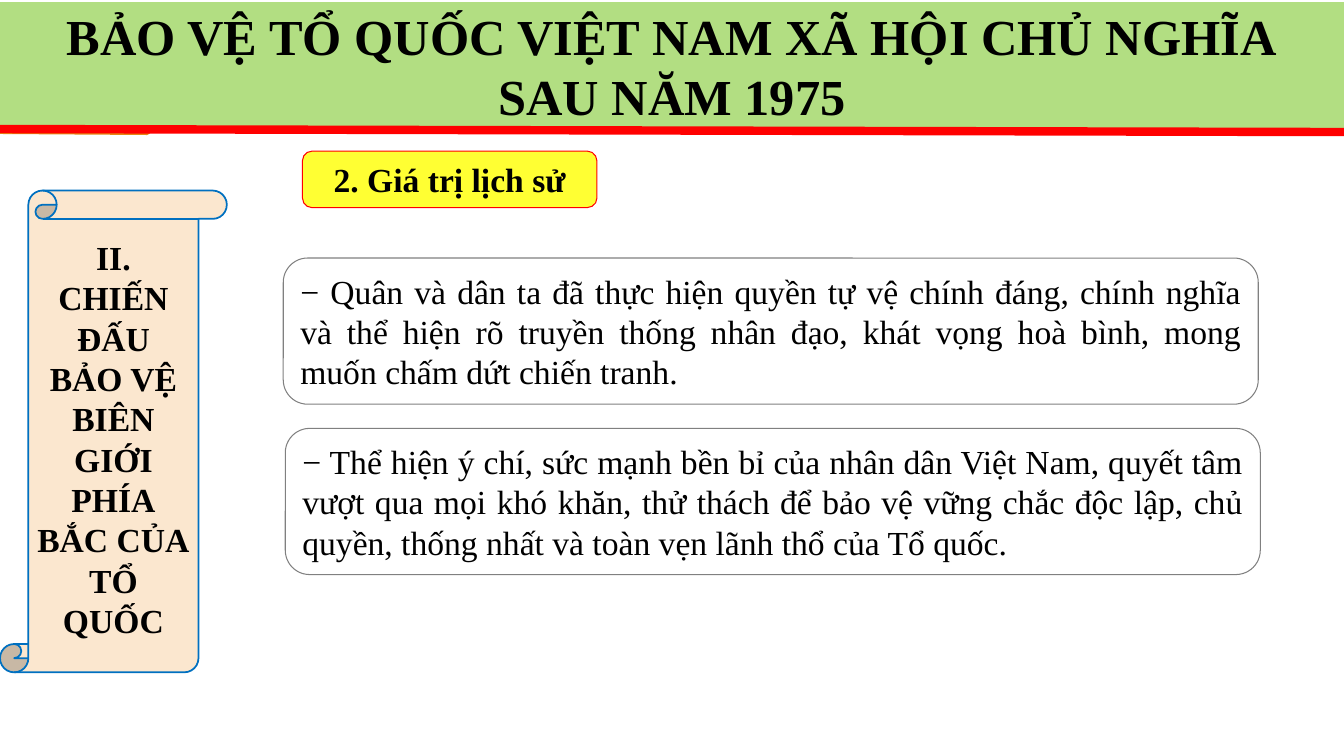
import pptx
import pptx.util
import pptx.dml.color
import pptx.enum.shapes
import pptx.enum.text
import pptx.oxml.ns
import lxml.etree
from dataclasses import dataclass

Inches = pptx.util.Inches
Shape = pptx.enum.shapes.MSO_SHAPE
Align = pptx.enum.text.PP_ALIGN
Fit = pptx.enum.text.MSO_AUTO_SIZE

# Content
TITLE = ("BẢO VỆ TỔ QUỐC VIỆT NAM XÃ HỘI CHỦ NGHĨA", "SAU NĂM 1975")
HEADING = "2. Giá trị lịch sử"
SCROLL_LINES = ("II.", "CHIẾN", "ĐẤU", "BẢO VỆ", "BIÊN", "GIỚI", "PHÍA",
                "BẮC CỦA", "TỔ", "QUỐC")
VALUES = (
    "− Quân và dân ta đã thực hiện quyền tự vệ chính đáng, chính nghĩa và thể "
    "hiện rõ truyền thống nhân đạo, khát vọng hoà bình, mong muốn chấm dứt chiến tranh.",
    "− Thể hiện ý chí, sức mạnh bền bỉ của nhân dân Việt Nam, quyết tâm vượt qua "
    "mọi khó khăn, thử thách để bảo vệ vững chắc độc lập, chủ quyền, thống nhất và "
    "toàn vẹn lãnh thổ của Tổ quốc.",
)


@dataclass(frozen=True)
class Theme:
    font: str = "Times New Roman"
    title_size: int = 36
    text_size: int = 24
    text: str = "000000"
    banner: str = "B2DE82"
    tab: str = "E78712"
    red: str = "FF0000"
    yellow: str = "FFFF33"
    scroll: str = "FBE7CF"
    blue: str = "0070C0"
    grey: str = "808080"


THEME = Theme()


def rgb(value):
    return pptx.dml.color.RGBColor.from_string(value)


def paint(sp, fill=None, line=None, width=0.75):
    if fill:
        sp.fill.solid()
        sp.fill.fore_color.rgb = rgb(fill)
    else:
        sp.fill.background()
    if line:
        sp.line.color.rgb = rgb(line)
        sp.line.width = pptx.util.Pt(width)
    else:
        sp.line.fill.background()


def write(sp, paragraphs, size=THEME.text_size, bold=True, align=Align.CENTER,
          fit=Fit.NONE):
    """Each paragraph is a tuple of lines."""
    tf = sp.text_frame
    tf.word_wrap = True
    tf.auto_size = fit
    tf.vertical_anchor = pptx.enum.text.MSO_ANCHOR.MIDDLE
    for i, lines in enumerate(paragraphs):
        p = tf.add_paragraph() if i else tf.paragraphs[0]
        p.alignment = align
        for j, line in enumerate(lines):
            if j:
                p.add_line_break()
            r = p.add_run()
            r.text = line
            r.font.name = THEME.font
            r.font.size = pptx.util.Pt(size)
            r.font.bold = bold
            r.font.color.rgb = rgb(THEME.text)


def add_box(slide, kind, box, fill=None, line=None, width=0.75):
    sp = slide.shapes.add_shape(kind, *map(Inches, box))
    sp.shadow.inherit = False
    paint(sp, fill, line, width)
    return sp


def main():
    prs = pptx.Presentation()
    prs.slide_width, prs.slide_height = Inches(13.33), Inches(7.5)
    slide = prs.slides.add_slide(prs.slide_layouts[5])

    # Arrow tab, sent behind the banner
    fb = slide.shapes.build_freeform(0, Inches(0.78), scale=1.0)
    tab_points = ((1.46, 0.78), (1.48, 0.79), (1.73, 1.04), (1.74, 1.06),
                  (1.73, 1.08), (1.48, 1.33), (1.46, 1.34), (0, 1.33))
    fb.add_line_segments([(Inches(x), Inches(y)) for x, y in tab_points], close=True)
    tab = fb.convert_to_shape()
    tab.shadow.inherit = False
    paint(tab, THEME.tab)

    # Title banner
    title = slide.shapes.title
    title.left, title.top, title.width, title.height = map(
        Inches, (0, 0.02, 13.33, 1.26))
    paint(title, THEME.banner)
    write(title, [(line,) for line in TITLE], THEME.title_size)
    tab._element.addnext(title._element)

    # Red rule under the banner
    rule = slide.shapes.add_connector(
        pptx.enum.shapes.MSO_CONNECTOR.STRAIGHT,
        *map(Inches, (0, 1.28, 13.33, 1.31)))
    rule.line.color.rgb = rgb(THEME.red)
    rule.line.width = pptx.util.Pt(6)
    lxml.etree.SubElement(rule._element.spPr, pptx.oxml.ns.qn("a:effectLst"))

    # Section heading
    heading = add_box(slide, Shape.ROUNDED_RECTANGLE, (3, 1.5, 2.92, 0.56),
                      THEME.yellow, THEME.red)
    write(heading, [(HEADING,)], fit=Fit.SHAPE_TO_FIT_TEXT)

    # Chapter scroll
    scroll = add_box(slide, Shape.VERTICAL_SCROLL, (0, 1.89, 2.25, 4.78),
                     THEME.scroll, THEME.blue, 1.25)
    write(scroll, [SCROLL_LINES])
    scroll.text_frame.margin_left = scroll.text_frame.margin_right = Inches(0.05)

    # Historical values
    for i, value in enumerate(VALUES):
        box = (2.81 + 0.02 * i, 2.56 + 1.69 * i, 9.67, 1.45)
        sp = add_box(slide, Shape.ROUNDED_RECTANGLE, box, line=THEME.grey)
        write(sp, [(value,)], bold=False, align=Align.JUSTIFY,
              fit=Fit.SHAPE_TO_FIT_TEXT)

    prs.save("out.pptx")


if __name__ == "__main__":
    main()
